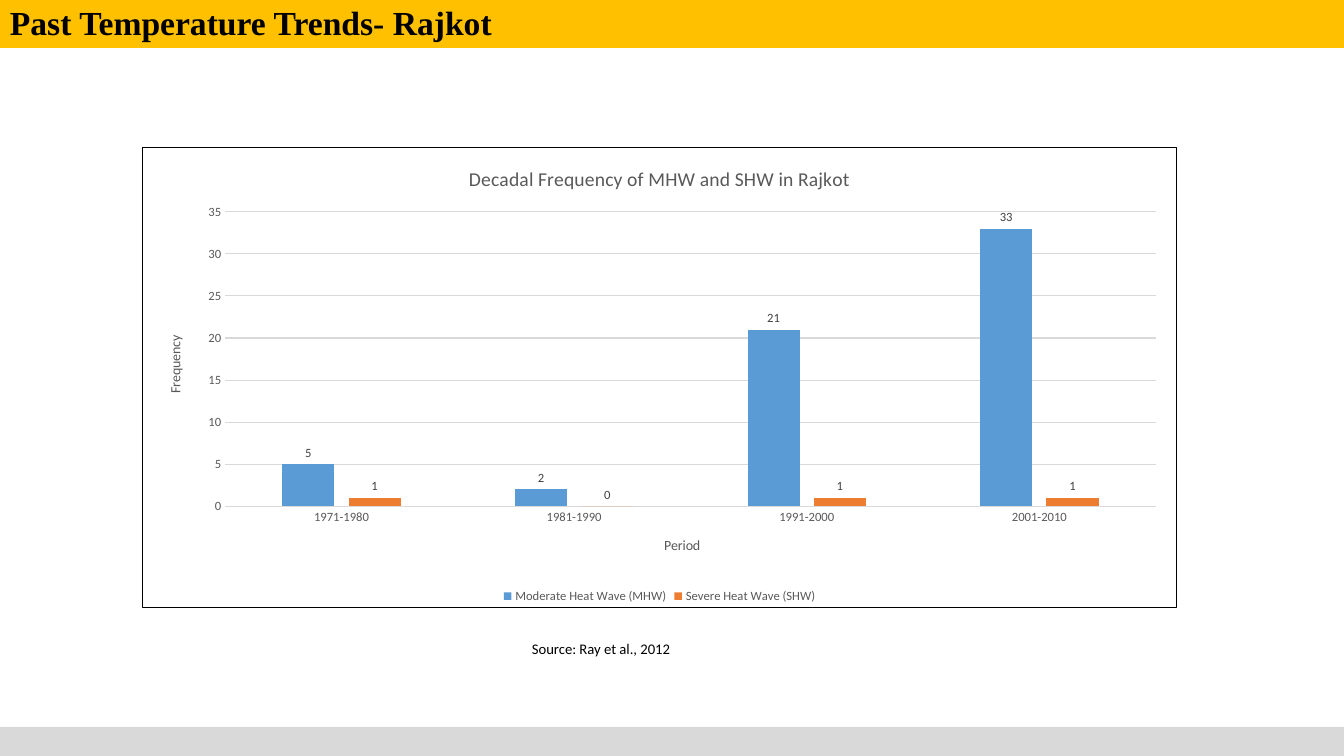
from lxml import etree
from pptx import Presentation
from pptx.chart.data import CategoryChartData
from pptx.dml.color import RGBColor
from pptx.enum.chart import XL_CHART_TYPE as ChartType
from pptx.enum.chart import XL_LABEL_POSITION as LabelPosition
from pptx.enum.chart import XL_LEGEND_POSITION as LegendPosition
from pptx.enum.chart import XL_TICK_MARK as TickMark
from pptx.enum.shapes import MSO_SHAPE as Shape
from pptx.enum.text import MSO_ANCHOR as Anchor
from pptx.oxml import parse_xml
from pptx.util import Emu, Pt

PX_PER_INCH = 100.8
PAGE_WIDTH, PAGE_HEIGHT = 1344, 756

AMBER = RGBColor(0xFF, 0xC0, 0x00)
LIGHT_GREY = RGBColor(0xD9, 0xD9, 0xD9)
MID_GREY = RGBColor(0x59, 0x59, 0x59)
DARK_GREY = RGBColor(0x40, 0x40, 0x40)
BLACK = RGBColor(0x00, 0x00, 0x00)
BLUE = RGBColor(0x5B, 0x9B, 0xD5)
ORANGE = RGBColor(0xED, 0x7D, 0x31)

DECADES = ["1971-1980", "1981-1990", "1991-2000", "2001-2010"]
HEAT_WAVES = [
    ("Moderate Heat Wave (MHW)", [5, 2, 21, 33], BLUE),
    ("Severe Heat Wave (SHW)", [1, 0, 1, 1], ORANGE),
]

CHART_NS = "http://schemas.openxmlformats.org/drawingml/2006/chart"
DRAWING_NS = "http://schemas.openxmlformats.org/drawingml/2006/main"
FRAME_XML = f"""<c:spPr xmlns:c="{CHART_NS}" xmlns:a="{DRAWING_NS}">
  <a:noFill/>
  <a:ln w="9525"><a:solidFill><a:srgbClr val="{BLACK}"/></a:solidFill></a:ln>
</c:spPr>"""


def px(length):
    return Emu(round(length * 914400 / PX_PER_INCH))


def style_font(font, size, color, name="Calibri", bold=False):
    font.name = name
    font.size = Pt(size)
    font.bold = bold
    font.color.rgb = color


def add_bar(page, top, height, color):
    """Add a plain bar across the full page width."""
    bar = page.shapes.add_shape(
        Shape.RECTANGLE, 0, px(top), px(PAGE_WIDTH), px(height))
    bar.shadow.inherit = False
    bar.fill.solid()
    bar.fill.fore_color.rgb = color
    bar.line.fill.background()
    return bar


def add_text(page, text, left, top, width, height, size, **font_options):
    box = page.shapes.add_textbox(px(left), px(top), px(width), px(height))
    frame = box.text_frame
    frame.word_wrap = True
    para = frame.paragraphs[0]
    para.text = text
    style_font(para.font, size, BLACK, **font_options)
    return frame


def set_title(owner, text, size):
    """Title a chart or an axis."""
    frame = owner.text_frame
    frame.text = text
    style_font(frame.paragraphs[0].font, size, MID_GREY)


def style_axis(axis, title):
    set_title(axis.axis_title, title, 10)
    axis.major_tick_mark = axis.minor_tick_mark = TickMark.NONE
    style_font(axis.tick_labels.font, 9, MID_GREY)


def style_grey_line(line):
    line.color.rgb = LIGHT_GREY
    line.width = Pt(0.75)


def style_series(series, color):
    series.format.fill.solid()
    series.format.fill.fore_color.rgb = color
    series.invert_if_negative = False
    labels = series.data_labels
    labels.show_value = True
    labels.position = LabelPosition.OUTSIDE_END
    style_font(labels.font, 9, DARK_GREY)


def place_plot(chart, **fractions):
    """Fix the inner plot area as fractions of the chart."""
    area = chart._chartSpace.chart.plotArea
    for old in area.findall(f"{{{CHART_NS}}}layout"):
        area.remove(old)
    layout = etree.Element(f"{{{CHART_NS}}}layout")
    manual = etree.SubElement(layout, f"{{{CHART_NS}}}manualLayout")
    settings = {"layoutTarget": "inner", "xMode": "edge", "yMode": "edge", **fractions}
    for tag, value in settings.items():
        etree.SubElement(manual, f"{{{CHART_NS}}}{tag}", val=str(value))
    area.insert(0, layout)


def add_heat_wave_chart(page, left, top, width, height):
    data = CategoryChartData()
    data.categories = DECADES
    for name, values, _ in HEAT_WAVES:
        data.add_series(name, values)
    chart = page.shapes.add_chart(
        ChartType.COLUMN_CLUSTERED, px(left), px(top), px(width), px(height), data).chart
    style_font(chart.font, 10, BLACK)
    chart._chartSpace.chart.addnext(parse_xml(FRAME_XML))
    set_title(chart.chart_title, "Decadal Frequency of MHW and SHW in Rajkot", 14)
    chart.chart_title.include_in_layout = False

    chart.has_legend = True
    chart.legend.position = LegendPosition.BOTTOM
    chart.legend.include_in_layout = False
    style_font(chart.legend.font, 9, MID_GREY)

    style_axis(chart.category_axis, "Period")
    style_grey_line(chart.category_axis.format.line)
    value_axis = chart.value_axis
    style_axis(value_axis, "Frequency")
    value_axis.minimum_scale, value_axis.maximum_scale = 0, 35
    value_axis.major_unit = 5
    value_axis.format.line.fill.background()
    style_grey_line(value_axis.major_gridlines.format.line)

    plot = chart.plots[0]
    plot.vary_by_categories = False
    plot.gap_width, plot.overlap = 219, -27
    for series, (_, _, color) in zip(plot.series, HEAT_WAVES):
        style_series(series, color)
    place_plot(chart, x=0.08, y=0.14, w=0.9, h=0.64)


def main():
    deck = Presentation()
    deck.slide_width, deck.slide_height = px(PAGE_WIDTH), px(PAGE_HEIGHT)
    page = deck.slides.add_slide(deck.slide_layouts[6])

    add_bar(page, 0, 48, AMBER)
    heading = add_text(page, "Past Temperature Trends- Rajkot", 0, 0, PAGE_WIDTH, 48,
                       24, name="Times New Roman", bold=True)
    heading.vertical_anchor = Anchor.BOTTOM
    heading.paragraphs[0].line_spacing = 0.9
    add_bar(page, 727, 29, LIGHT_GREY)
    add_text(page, "Source: Ray et al., 2012", 522, 635, 166, 28, 10.5)
    add_heat_wave_chart(page, 142, 147, 1035, 461)

    deck.save("out.pptx")


if __name__ == "__main__":
    main()
